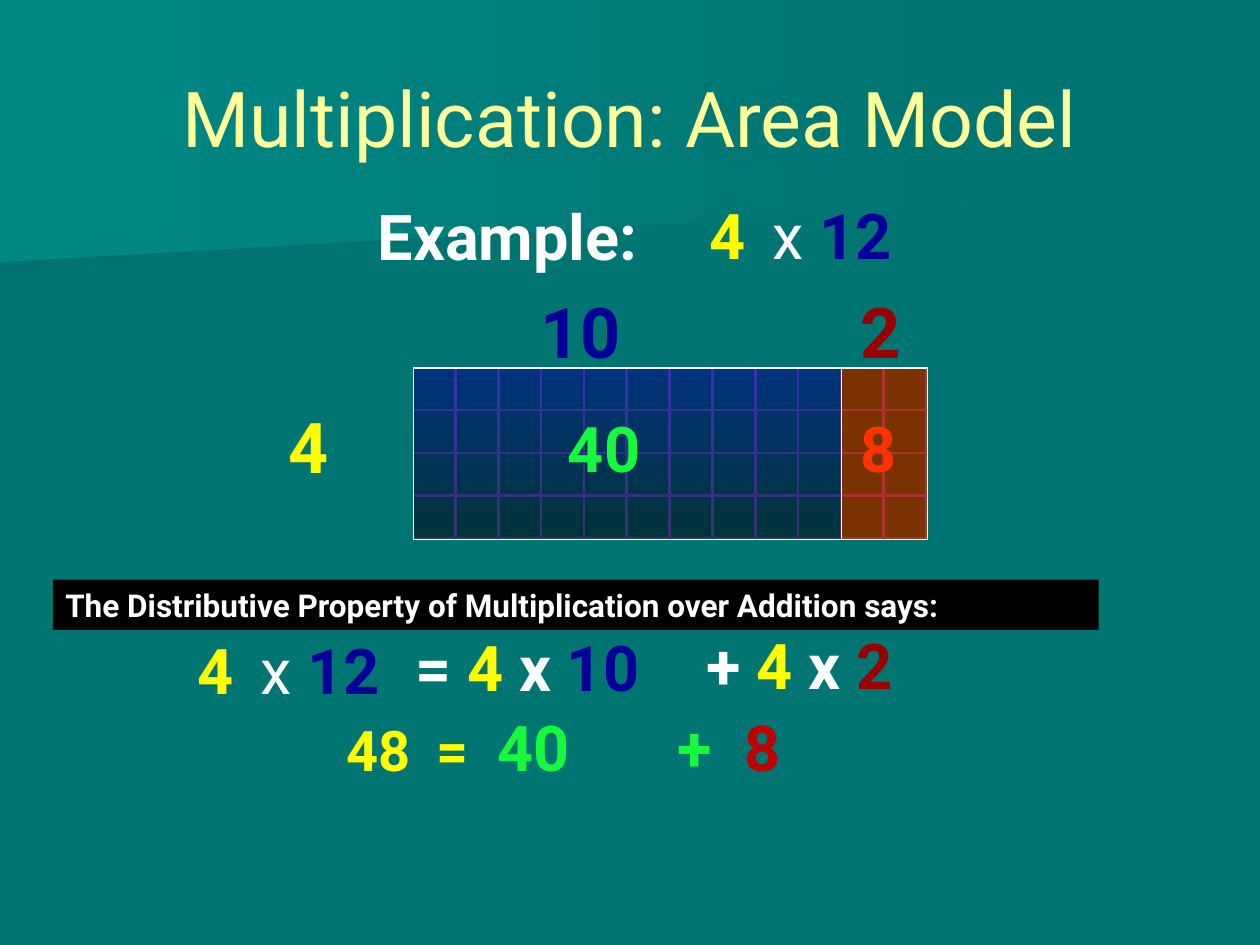
from lxml import etree
from pptx import Presentation
from pptx.dml.color import RGBColor
from pptx.enum.shapes import MSO_SHAPE
from pptx.enum.text import MSO_ANCHOR, PP_ALIGN
from pptx.oxml.ns import qn
from pptx.util import Inches, Pt

RECTANGLE = MSO_SHAPE.RECTANGLE
CENTER = PP_ALIGN.CENTER
MIDDLE = MSO_ANCHOR.MIDDLE
FONT = "Roboto"
WHITE, YELLOW, BLUE, RED, GREEN = "FFFFFF", "FFFF00", "000099", "990000", "17F93D"
rgb = RGBColor.from_string


def paint(shape, colors, angle=0, opacity=100, outlined=True):
    """Fill with one colour, or a gradient of two, and add a thin white outline."""
    shape.shadow.inherit = False
    if len(colors) == 1:
        shape.fill.solid()
        shape.fill.fore_color.rgb = rgb(colors[0])
    else:
        shape.fill.gradient()
        shape.fill.gradient_angle = angle
        for stop, color, position in zip(shape.fill.gradient_stops, colors, (0, 1)):
            stop.color.rgb = rgb(color)
            stop.position = position
    if opacity < 100:
        for color in shape._element.spPr.iter(qn("a:srgbClr")):
            etree.SubElement(color, qn("a:alpha"), val=str(opacity * 1000))
    if outlined:
        shape.line.color.rgb = rgb(WHITE)
        shape.line.width = Pt(0.75)
    else:
        shape.line.fill.background()


def add_text(left, top, width, height, size, runs, bold=True):
    """Add a text box; runs are (text, colour) with an optional own size or weight."""
    box = slide.shapes.add_textbox(Inches(left), Inches(top), Inches(width), Inches(height))
    box.text_frame.word_wrap = True
    paragraph = box.text_frame.paragraphs[0]
    for text, color, *own in runs:
        run = paragraph.add_run()
        run.text = text
        run.font.name = FONT
        run.font.size = Pt(own[0] if own else size)
        run.font.bold = own[1] if len(own) > 1 else bold
        run.font.color.rgb = rgb(color)
    return box


deck = Presentation()
deck.slide_width, deck.slide_height = Inches(10), Inches(7.5)
slide = deck.slides.add_slide(deck.slide_layouts[6])
slide.background.fill.solid()
slide.background.fill.fore_color.rgb = rgb("007572")

# Background bands
bands = [
    ([(7.78, 1.53), (0, 2.17), (0, 1.01), (7.79, 1.01), (7.78, 1.28)], "00726F"),
    ([(7.92, 1.62), (0, 2.08), (0, 0), (7.92, 0)], "008885"),
]
for corners, left_color in bands:
    points = [(Inches(x), Inches(y)) for x, y in corners]
    outline = slide.shapes.build_freeform(*points[0])
    outline.add_line_segments(points[1:], close=True)
    paint(outline.convert_to_shape(), [left_color, "007572"], outlined=False)

# Unit squares of the 4 x 12 area
ROWS, TENS, ONES = 4, 10, 2
GRID_LEFT, GRID_TOP, PITCH, SQUARE = 3.28, 2.92, 0.34, 0.33
for row in range(ROWS):
    for column in range(TENS + ONES):
        unit = slide.shapes.add_shape(
            RECTANGLE, Inches(GRID_LEFT + column * PITCH), Inches(GRID_TOP + row * PITCH),
            Inches(SQUARE), Inches(SQUARE))
        paint(unit, ["00FF00"])

# Title and example
title = add_text(0.5, 0.3, 9, 1.25, 44, [("Multiplication: Area Model", "FFFF99")], bold=False)
title.text_frame.vertical_anchor = MIDDLE
title.text_frame.paragraphs[0].alignment = CENTER
add_text(2.9, 1.52, 2.53, 0.7, 36, [("Example:", WHITE)])

# The product 4 x 12, in the example and in the equation
for left, top in [(5.53, 1.51), (1.47, 4.96)]:
    add_text(left + 0.5, top, 1.45, 0.7, 36, [("x ", WHITE, 36, False), ("12", BLUE)])
    add_text(left, top, 0.99, 0.7, 36, [("4", YELLOW)])

# Distributive property
banner = slide.shapes.add_shape(RECTANGLE, Inches(0.42), Inches(4.6), Inches(8.3), Inches(0.4))
paint(banner, ["000000"], outlined=False)
banner.text_frame.text = "The Distributive Property of Multiplication over Addition says:"
statement = banner.text_frame.paragraphs[0]
statement.alignment = PP_ALIGN.LEFT
statement.runs[0].font.name = FONT
statement.runs[0].font.size = Pt(18)
statement.runs[0].font.bold = True
statement.runs[0].font.color.rgb = rgb(WHITE)

for left, top, width, sign, factor, color in [
    (3.2, 4.94, 5.45, "= ", "10", BLUE),
    (5.51, 4.92, 2.81, "+ ", "2", RED),
]:
    add_text(left, top, width, 0.7, 36,
             [(sign, WHITE), ("4", YELLOW), (" x ", WHITE), (factor, color)])

# Partial areas over the squares
for first_column, columns, colors in [(0, TENS, [BLUE, "000047"]), (TENS, ONES, [RED])]:
    area = slide.shapes.add_shape(
        RECTANGLE, Inches(GRID_LEFT + first_column * PITCH), Inches(GRID_TOP),
        Inches(columns * PITCH), Inches(ROWS * PITCH))
    paint(area, colors, angle=270, opacity=80)

# Side lengths
for left, top, length, color in [
    (6.73, 2.24, "2", RED), (2.19, 3.15, "4", YELLOW), (4.19, 2.24, "10", BLUE),
]:
    add_text(left, top, 1.16, 0.77, 40, [(length, color)])

# Sum of the partial products, aligned on tab stops
total = add_text(2.65, 5.57, 4.37, 0.71, 36, [
    ("48\t=\t", YELLOW, 32), ("40\t+\t", GREEN), ("8", "C00000")])
tab_list = etree.SubElement(total.text_frame.paragraphs[0]._p.get_or_add_pPr(), qn("a:tabLst"))
for stop in (0.72, 1.2, 2.63, 3.16):
    etree.SubElement(tab_list, qn("a:tab"), pos=str(Inches(stop)), algn="l")

add_text(4.41, 3.2, 0.84, 0.71, 36, [("40", GREEN)])
add_text(6.73, 3.2, 0.52, 0.71, 36, [("8", "FF3300")])

deck.save("out.pptx")
